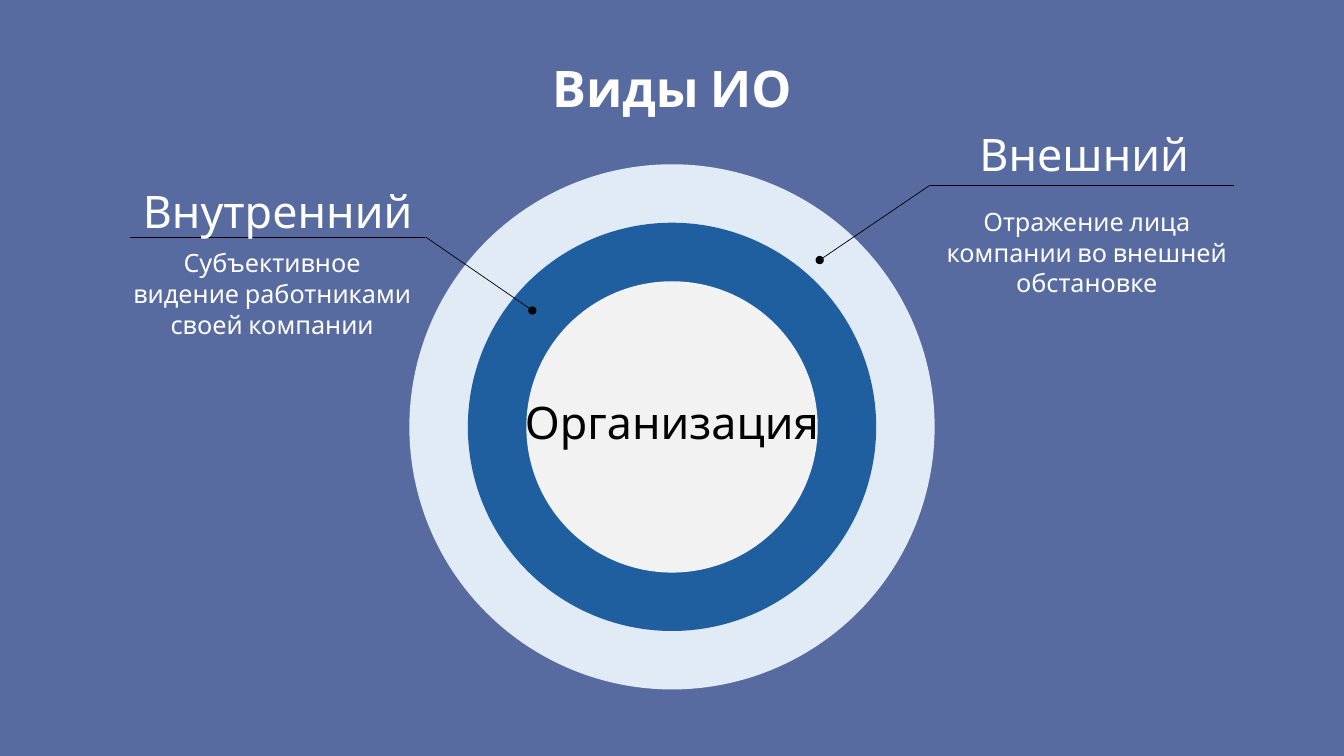
from lxml import etree
from pptx import Presentation
from pptx.dml.color import RGBColor
from pptx.enum.shapes import MSO_CONNECTOR, MSO_SHAPE
from pptx.enum.text import MSO_ANCHOR, PP_ALIGN
from pptx.oxml.ns import qn
from pptx.util import Inches, Pt


def rgb(value):
    return RGBColor.from_string(value)


def add_text(s, text, box, size, color="FFFFFF", bold=False, spacing=37, anchor=MSO_ANCHOR.MIDDLE):
    tf = s.shapes.add_textbox(*map(Inches, box)).text_frame
    tf.word_wrap = True
    tf.vertical_anchor = anchor
    p = tf.paragraphs[0]
    p.alignment = PP_ALIGN.CENTER
    p.line_spacing = Pt(spacing)
    r = p.add_run()
    r.text = text
    for name, value in {"name": "Cabin", "size": Pt(size), "bold": bold}.items():
        setattr(r.font, name, value)
    r.font.color.rgb = rgb(color)


prs = Presentation()
prs.slide_width, prs.slide_height = Inches(13.33), Inches(7.5)
s = prs.slides.add_slide(prs.slide_layouts[6])
s.background.fill.solid()
s.background.fill.fore_color.rgb = rgb("576BA0")

# Title
add_text(s, "Виды ИО", (4.16, 0.61, 5.01, 0.59), 36, bold=True)

# Concentric circles, largest first
center_x, center_y = 6.665, 4.235
for i, color in enumerate(["E0EBF6", "E0EBF6", "1F5FA0", "1F5FA0", "F2F2F2"]):
    d = 5.21 - 0.58 * i
    circle = s.shapes.add_shape(MSO_SHAPE.OVAL, Inches(center_x - d / 2), Inches(center_y - d / 2),
                                Inches(d), Inches(d))
    circle.shadow.inherit = False
    circle.fill.solid()
    circle.fill.fore_color.rgb = rgb(color)
    circle.line.fill.background()

# Callout lines: underline, then a pointer ending in a dot
callouts = [
    [(12.24, 1.84), (9.22, 1.84), (8.13, 2.58)],
    [(1.29, 2.35), (4.22, 2.35), (5.28, 3.08)],
]
for outer, bend, target in callouts:
    for start, end in [(outer, bend), (bend, target)]:
        line = s.shapes.add_connector(MSO_CONNECTOR.STRAIGHT, *map(Inches, start + end))
        line.line.color.rgb = rgb("000000")
        line.line.width = Pt(0.5)
        spPr = line._element.spPr
        if end == target:
            etree.SubElement(spPr.find(qn("a:ln")), qn("a:tailEnd"), type="oval")
        etree.SubElement(spPr, qn("a:effectLst"))

# Headings and descriptions
labels = [
    ("Внутренний", (0.25, 1.8), "Субъективное видение работниками своей компании", (1.2, 2.4)),
    ("Внешний", (8.25, 1.24), "Отражение лица компании во внешней обстановке", (9.28, 1.99)),
]
for heading, heading_at, description, description_at in labels:
    add_text(s, heading, heading_at + (5.01, 0.59), 32)
    add_text(s, description, description_at + (3, 1.03), 18, spacing=22, anchor=MSO_ANCHOR.TOP)

# Centre label
add_text(s, "Организация", (4.16, 3.9, 5.01, 0.59), 32, color="000000")

prs.save("out.pptx")
